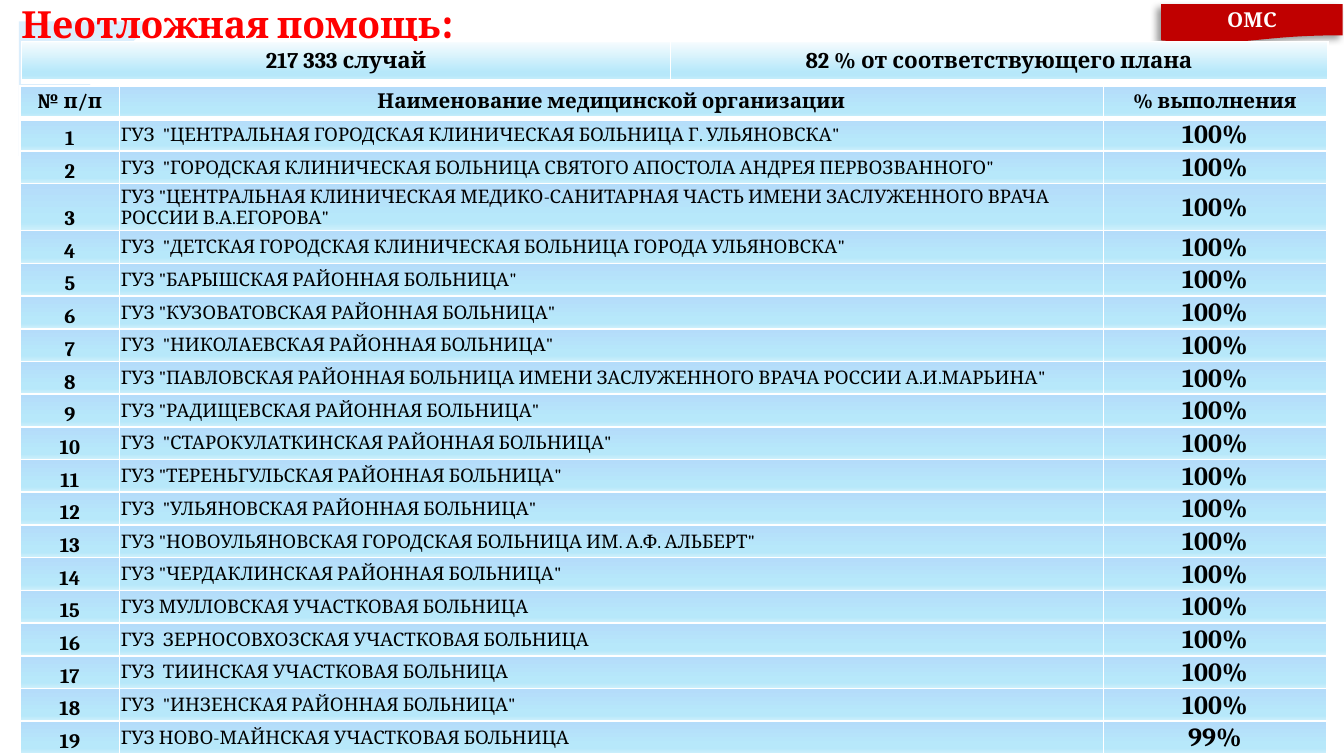
from dataclasses import dataclass

from lxml import etree
from pptx import Presentation
from pptx.dml.color import RGBColor
from pptx.enum.shapes import MSO_SHAPE as Shape
from pptx.enum.text import MSO_ANCHOR as Anchor, MSO_AUTO_SIZE as AutoSize, PP_ALIGN as Align
from pptx.oxml import parse_xml
from pptx.oxml.ns import nsdecls, qn
from pptx.util import Inches, Pt

FONT = "Cambria"
BLACK = "000000"
WHITE = "FFFFFF"
ROW_GRADIENT = ((0, "B4DCFA"), (74, "B7E8FA"), (83, "B7E8FA"), (100, "CFF0FB"))
TOTAL_GRADIENT = ((0, "F7FCFE"), *ROW_GRADIENT[1:])
LIST_HEIGHT = 4.97
HEADING_HEIGHT = 0.24
TALL_ROW_HEIGHT = 0.35
TALL_ROW = 3

HOSPITALS = (
    'ГУЗ  "ЦЕНТРАЛЬНАЯ ГОРОДСКАЯ КЛИНИЧЕСКАЯ БОЛЬНИЦА Г. УЛЬЯНОВСКА"',
    'ГУЗ  "ГОРОДСКАЯ КЛИНИЧЕСКАЯ БОЛЬНИЦА СВЯТОГО АПОСТОЛА АНДРЕЯ ПЕРВОЗВАННОГО"',
    'ГУЗ "ЦЕНТРАЛЬНАЯ КЛИНИЧЕСКАЯ МЕДИКО-САНИТАРНАЯ ЧАСТЬ ИМЕНИ ЗАСЛУЖЕННОГО ВРАЧА РОССИИ В.А.ЕГОРОВА"',
    'ГУЗ  "ДЕТСКАЯ ГОРОДСКАЯ КЛИНИЧЕСКАЯ БОЛЬНИЦА ГОРОДА УЛЬЯНОВСКА"',
    'ГУЗ "БАРЫШСКАЯ РАЙОННАЯ БОЛЬНИЦА"',
    'ГУЗ "КУЗОВАТОВСКАЯ РАЙОННАЯ БОЛЬНИЦА"',
    'ГУЗ  "НИКОЛАЕВСКАЯ РАЙОННАЯ БОЛЬНИЦА"',
    'ГУЗ "ПАВЛОВСКАЯ РАЙОННАЯ БОЛЬНИЦА ИМЕНИ ЗАСЛУЖЕННОГО ВРАЧА РОССИИ А.И.МАРЬИНА"',
    'ГУЗ "РАДИЩЕВСКАЯ РАЙОННАЯ БОЛЬНИЦА"',
    'ГУЗ  "СТАРОКУЛАТКИНСКАЯ РАЙОННАЯ БОЛЬНИЦА"',
    'ГУЗ "ТЕРЕНЬГУЛЬСКАЯ РАЙОННАЯ БОЛЬНИЦА"',
    'ГУЗ  "УЛЬЯНОВСКАЯ РАЙОННАЯ БОЛЬНИЦА"',
    'ГУЗ "НОВОУЛЬЯНОВСКАЯ ГОРОДСКАЯ БОЛЬНИЦА ИМ. А.Ф. АЛЬБЕРТ"',
    'ГУЗ "ЧЕРДАКЛИНСКАЯ РАЙОННАЯ БОЛЬНИЦА"',
    "ГУЗ МУЛЛОВСКАЯ УЧАСТКОВАЯ БОЛЬНИЦА",
    "ГУЗ  ЗЕРНОСОВХОЗСКАЯ УЧАСТКОВАЯ БОЛЬНИЦА",
    "ГУЗ  ТИИНСКАЯ УЧАСТКОВАЯ БОЛЬНИЦА",
    'ГУЗ  "ИНЗЕНСКАЯ РАЙОННАЯ БОЛЬНИЦА"',
    "ГУЗ НОВО-МАЙНСКАЯ УЧАСТКОВАЯ БОЛЬНИЦА",
)
RESULTS = ("100%",) * 18 + ("99%",)


@dataclass(frozen=True)
class CellStyle:
    size: float
    bold: bool = True
    align: Align = Align.CENTER
    anchor: Anchor = Anchor.MIDDLE
    margins: tuple = (0.07, 0, 0.07, 0)
    gradient: tuple = ROW_GRADIENT


TOTAL = CellStyle(12, anchor=Anchor.TOP, margins=(0.1, 0.05, 0.1, 0.05), gradient=TOTAL_GRADIENT)
HEADING = CellStyle(11)
NUMBER = CellStyle(11, anchor=Anchor.BOTTOM)
HOSPITAL = CellStyle(10, bold=False, align=Align.LEFT, margins=(0.01, 0.01, 0.01, 0))
RESULT = CellStyle(14, margins=(0.01, 0.01, 0.01, 0))


def color(value: str) -> RGBColor:
    return RGBColor.from_string(value)


def add_span(para, text: str, size: float, ink: str, bold: bool = True) -> None:
    span = para.add_run()
    span.text = text
    span.font.name = FONT
    span.font.size = Pt(size)
    span.font.bold = bold
    span.font.color.rgb = color(ink)


def set_margins(target, margins: tuple) -> None:
    sides = ("left", "top", "right", "bottom")
    for side, value in zip(sides, margins):
        setattr(target, f"margin_{side}", Inches(value))


def add_border(properties, side: str, width: float) -> None:
    properties.append(parse_xml(
        f'<a:ln{side} {nsdecls("a")} w="{Pt(width)}"><a:solidFill>'
        f'<a:srgbClr val="{WHITE}"/></a:solidFill></a:ln{side}>'))


def add_gradient(properties, stops: tuple) -> None:
    marks = "".join(
        f'<a:gs pos="{place * 1000}"><a:srgbClr val="{tone}"/></a:gs>' for place, tone in stops)
    properties.append(parse_xml(
        f'<a:gradFill {nsdecls("a")} rotWithShape="1"><a:gsLst>{marks}</a:gsLst>'
        f'<a:lin ang="5400000" scaled="0"/></a:gradFill>'))


def fill_cell(cell, text: str, style: CellStyle, top: float, bottom: float) -> None:
    cell.vertical_anchor = style.anchor
    set_margins(cell, style.margins)
    para = cell.text_frame.paragraphs[0]
    para.alignment = style.align
    add_span(para, text, style.size, BLACK, style.bold)
    properties = cell._tc.get_or_add_tcPr()
    for side, width in (("L", 1), ("R", 1), ("T", top), ("B", bottom)):
        add_border(properties, side, width)
    add_gradient(properties, style.gradient)


def add_grid(page, left: float, top: float, widths: tuple, heights: tuple, rows: list) -> None:
    frame = page.shapes.add_table(
        len(rows), len(widths), Inches(left), Inches(top),
        Inches(sum(widths)), Inches(sum(heights)))
    grid = frame.table
    grid.first_row = False
    grid.horz_banding = False
    for column, width in zip(grid.columns, widths):
        column.width = Inches(width)
    for index, (height, row) in enumerate(zip(heights, rows)):
        grid.rows[index].height = Inches(height)
        upper = 3 if index == 1 else 1
        lower = 3 if index == 0 else 1
        for column, (text, style) in enumerate(row):
            fill_cell(grid.cell(index, column), text, style, upper, lower)


def add_title(page):
    title = page.shapes.title
    title.left, title.top = Inches(0.06), Inches(-0.1)
    title.width, title.height = Inches(8.56), Inches(0.5)
    box = title.text_frame
    box.word_wrap = True
    box.auto_size = AutoSize.NONE
    box.vertical_anchor = Anchor.TOP
    set_margins(box, (0.1, 0.05, 0.1, 0.05))
    para = box.paragraphs[0]
    para.alignment = Align.LEFT
    add_span(para, "Неотложная помощь", 20, "FF0000")
    add_span(para, ":", 24, "FF0000")
    return title


def add_plain_shape(page, kind: Shape, left: float, top: float, width: float, height: float, fill: str):
    shape = page.shapes.add_shape(kind, Inches(left), Inches(top), Inches(width), Inches(height))
    shape.shadow.inherit = False
    shape.fill.solid()
    shape.fill.fore_color.rgb = color(fill)
    shape.line.fill.background()
    return shape


def add_corner(page, title) -> None:
    corner = add_plain_shape(page, Shape.RIGHT_TRIANGLE, 0.14, 0.16, 1, 1, "4FADF3")
    corner.rotation = 90
    tone = corner.element.spPr.find(qn("a:solidFill")).find(qn("a:srgbClr"))
    etree.SubElement(tone, qn("a:alpha")).set("val", "20000")
    title.element.addprevious(corner.element)


def add_ribbon(page) -> None:
    ribbon = add_plain_shape(page, Shape.FLOWCHART_DOCUMENT, 8.64, 0.03, 1.35, 0.29, "C00000")
    ribbon.element.spPr.find(qn("a:effectLst")).append(parse_xml(
        f'<a:outerShdw {nsdecls("a")} blurRad="{Pt(4)}" dist="{Pt(3)}" dir="8100000" '
        f'algn="tr" rotWithShape="0"><a:srgbClr val="{BLACK}"><a:alpha val="40000"/>'
        f'</a:srgbClr></a:outerShdw>'))
    box = ribbon.text_frame
    box.vertical_anchor = Anchor.MIDDLE
    set_margins(box, (0.07, 0.03, 0.07, 0.03))
    para = box.paragraphs[0]
    para.alignment = Align.CENTER
    add_span(para, "ОМС", 11, WHITE)


def main() -> None:
    deck = Presentation()
    deck.slide_width = Inches(10)
    deck.slide_height = deck.slide_width * 9 // 16
    page = deck.slides.add_slide(deck.slide_layouts[5])
    title = add_title(page)
    add_corner(page, title)
    add_ribbon(page)
    totals = [[(text, TOTAL) for text in ("217 333 случай", "82 % от соответствующего плана")]]
    add_grid(page, 0.16, 0.31, (4.83, 4.89), (0.3,), totals)
    headings = ("№ п/п", "Наименование медицинской организации", "% выполнения")
    rows = [[(text, HEADING) for text in headings]]
    for number, (hospital, result) in enumerate(zip(HOSPITALS, RESULTS), start=1):
        rows.append([(str(number), NUMBER), (hospital, HOSPITAL), (result, RESULT)])
    row_height = (LIST_HEIGHT - HEADING_HEIGHT - TALL_ROW_HEIGHT) / (len(HOSPITALS) - 1)
    heights = [HEADING_HEIGHT] + [row_height] * len(HOSPITALS)
    heights[TALL_ROW] = TALL_ROW_HEIGHT
    add_grid(page, 0.15, 0.64, (0.74, 7.32, 1.66), tuple(heights), rows)
    deck.save("out.pptx")


if __name__ == "__main__":
    main()
